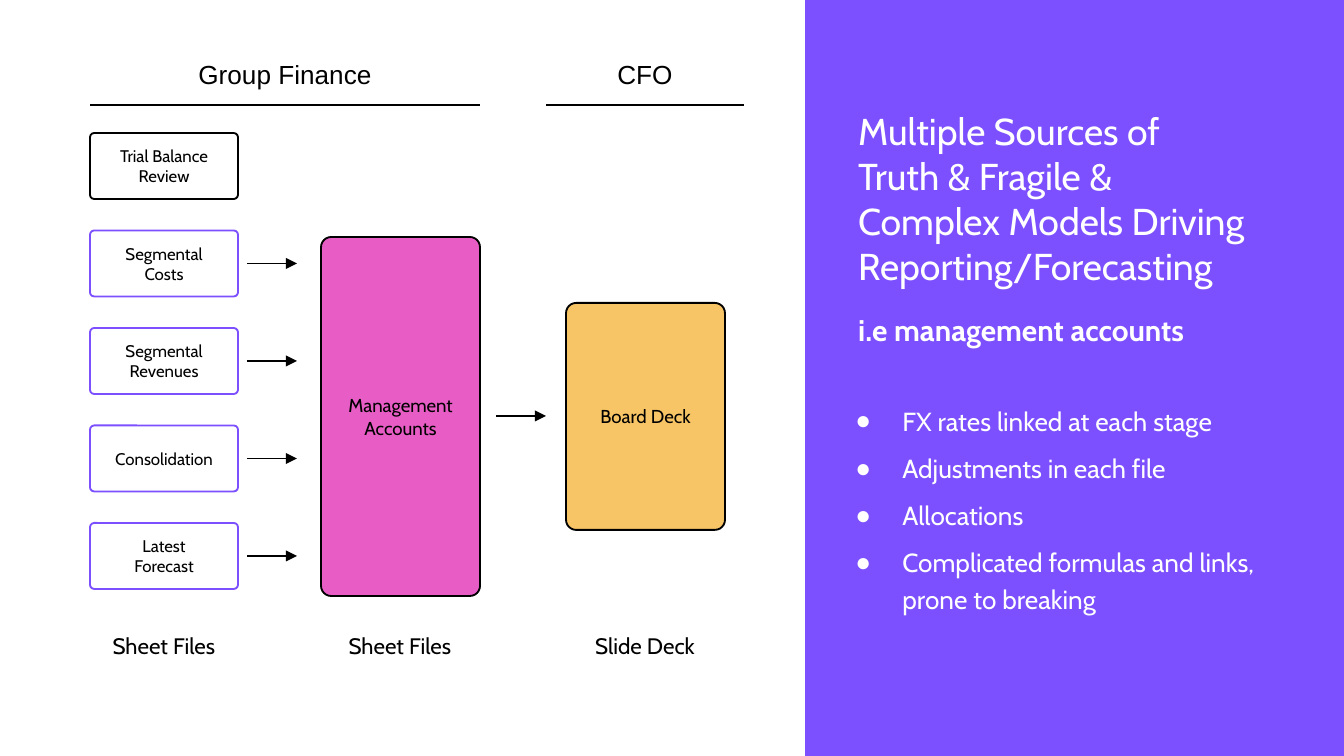
from lxml.etree import SubElement
from pptx import Presentation
from pptx.dml.color import RGBColor
from pptx.enum.shapes import MSO_CONNECTOR, MSO_SHAPE
from pptx.enum.text import MSO_ANCHOR, PP_ALIGN
from pptx.oxml.ns import qn
from pptx.util import Emu, Inches, Pt

PX = 914400 / 134.4
PURPLE, PINK, AMBER = "7C4FFF", "E85DC5", "F7C565"
BLACK, WHITE = "000000", "FFFFFF"

# Content
TITLE = ["Multiple Sources of", "Truth & Fragile &",
         "Complex Models Driving Reporting/Forecasting"]
SUBTITLE = ["i.e management accounts"]
ISSUES = ["FX rates linked at each stage", "Adjustments in each file",
          "Allocations", "Complicated formulas and links, prone to breaking"]
SOURCES = [["Trial Balance Review"], ["Segmental", "Costs"],
           ["Segmental Revenues"], ["Consolidation"], ["Latest", "Forecast"]]
# Header, rule start, rule end, text centre
HEADERS = [("Group Finance", 90, 480, 285), ("CFO", 546, 744, 645)]
# Caption, column centre
CAPTIONS = [("Sheet Files", 164), ("Sheet Files", 400), ("Slide Deck", 645)]
# Name, box, fill
STAGES = [("Management Accounts", (321, 237, 159, 359), PINK),
          ("Board Deck", (566, 303, 159, 227), AMBER)]

# Layout
SOURCE_LEFT, SOURCE_WIDTH, SOURCE_HEIGHT = 90, 148, 66
SOURCE_FIRST, SOURCE_LAST = 133, 523
ARROW_LENGTH = 50
LABEL_WIDTH, LABEL_HEIGHT = 230, 42


def px(value):
    return Emu(round(value * PX))


def color(code):
    return RGBColor.from_string(code)


def write(box, lines, size, code=BLACK, font="Cabin", bold=False,
          inset=0.1, bullet=False, **formats):
    frame = box.text_frame
    frame.word_wrap = True
    frame.margin_left = frame.margin_right = Inches(0.1)
    frame.margin_top = frame.margin_bottom = Inches(inset)
    for index, line in enumerate(lines):
        para = frame.paragraphs[0] if index == 0 else frame.add_paragraph()
        for name, value in formats.items():
            if index or name != "space_before":
                setattr(para, name, value)
        if bullet:
            add_bullet(para, code)
        span = para.add_run()
        span.text = line
        for name, value in {"name": font, "size": Pt(size), "bold": bold}.items():
            setattr(span.font, name, value)
        span.font.color.rgb = color(code)


def add_bullet(para, code):
    props = para._p.get_or_add_pPr()
    props.set("marL", str(Inches(0.5)))
    props.set("indent", str(-Inches(0.35)))
    SubElement(SubElement(props, qn("a:buClr")), qn("a:srgbClr")).set("val", code)
    SubElement(props, qn("a:buFont")).set("typeface", "Arial")
    SubElement(props, qn("a:buChar")).set("char", "●")


def add_text(page, area, lines, size, **formats):
    box = page.shapes.add_textbox(*map(px, area))
    write(box, lines, size, **formats)


def add_label(page, center, top, text, size, font="Cabin"):
    area = (center - LABEL_WIDTH / 2, top, LABEL_WIDTH, LABEL_HEIGHT)
    add_text(page, area, [text], size, font=font, inset=0.05,
             alignment=PP_ALIGN.CENTER)


def add_box(page, area, lines, size, outline=BLACK, fill=None):
    box = page.shapes.add_shape(MSO_SHAPE.ROUNDED_RECTANGLE, *map(px, area))
    box.shadow.inherit = False
    box.adjustments[0] = 0.064
    if fill:
        box.fill.solid()
        box.fill.fore_color.rgb = color(fill)
    else:
        box.fill.background()
    box.line.color.rgb = color(outline)
    box.line.width = Pt(1)
    box.text_frame.vertical_anchor = MSO_ANCHOR.MIDDLE
    write(box, lines, size, alignment=PP_ALIGN.CENTER)


def add_line(page, start, end, y, arrow=False):
    line = page.shapes.add_connector(
        MSO_CONNECTOR.STRAIGHT, px(start), px(y), px(end), px(y))
    line.line.color.rgb = color(BLACK)
    line.line.width = Pt(0.75)
    if arrow:
        SubElement(line.line._get_or_add_ln(), qn("a:tailEnd")).set("type", "triangle")
    SubElement(line._element.spPr, qn("a:effectLst"))


def main():
    deck = Presentation()
    deck.slide_width, deck.slide_height = px(1344), px(756)
    page = deck.slides.add_slide(deck.slide_layouts[6])

    # Purple page with a white diagram panel
    page.background.fill.solid()
    page.background.fill.fore_color.rgb = color(PURPLE)
    panel = page.shapes.add_shape(MSO_SHAPE.RECTANGLE, 0, 0, px(805), px(756))
    panel.shadow.inherit = False
    panel.fill.solid()
    panel.fill.fore_color.rgb = color(WHITE)
    panel.line.fill.background()

    # Message on the right
    add_text(page, (845, 95, 509, 200), TITLE, 20, code=WHITE)
    add_text(page, (845, 301, 487, 59), SUBTITLE, 16, code=WHITE, bold=True,
             line_spacing=0.95)
    add_text(page, (822, 387, 507, 259), ISSUES, 14, code=WHITE, bullet=True,
             line_spacing=1.15, space_before=Pt(6))

    # Column headers and captions
    for text, start, end, center in HEADERS:
        add_label(page, center, 52, text, 14, "Arial")
        add_line(page, start, end, 105)
    for text, center in CAPTIONS:
        add_label(page, center, 626, text, 12)

    # Source files; all but the first feed the accounts
    pitch = (SOURCE_LAST - SOURCE_FIRST) / (len(SOURCES) - 1)
    for index, lines in enumerate(SOURCES):
        top = SOURCE_FIRST + index * pitch
        add_box(page, (SOURCE_LEFT, top, SOURCE_WIDTH, SOURCE_HEIGHT), lines, 9,
                outline=PURPLE if index else BLACK)
        if index:
            add_line(page, 247, 247 + ARROW_LENGTH, top + SOURCE_HEIGHT / 2, True)

    # Accounts and board deck
    for name, area, fill in STAGES:
        add_box(page, area, [name], 10, fill=fill)
    add_line(page, 496, 496 + ARROW_LENGTH, 416, True)

    deck.save("out.pptx")


if __name__ == "__main__":
    main()
